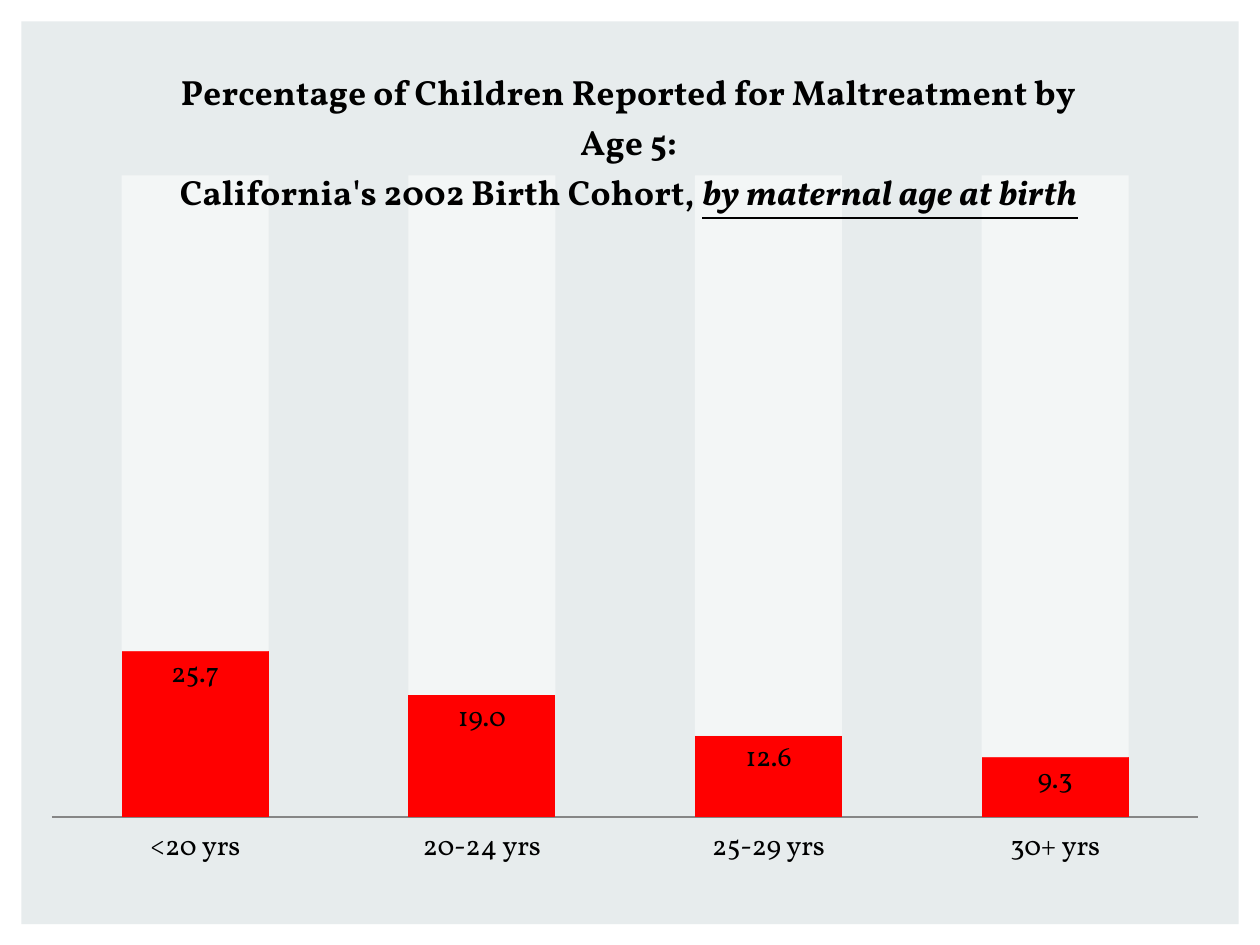
from lxml import etree
from pptx import Presentation
from pptx.chart.data import CategoryChartData
from pptx.dml.color import RGBColor
from pptx.enum.chart import XL_CHART_TYPE as ChartType
from pptx.enum.chart import XL_LABEL_POSITION as LabelPosition
from pptx.enum.chart import XL_TICK_LABEL_POSITION as TickLabels
from pptx.enum.chart import XL_TICK_MARK as TickMark
from pptx.enum.shapes import MSO_SHAPE as Shape
from pptx.enum.text import PP_ALIGN as Align
from pptx.oxml.ns import qn
from pptx.util import Cm, Pt

# Content
TITLE = [
    [("Percentage of Children Reported for Maltreatment by Age 5:", {})],
    [("California's 2002 Birth Cohort, ", {}),
     ("by maternal age at birth", {"italic": True, "underline": True})],
]
AGE_GROUPS = ["<20 yrs", "20-24 yrs", "25-29 yrs", "30+ yrs"]
SERIES = [
    {"name": "Series 1", "values": [25.7, 19.0, 12.6, 9.3], "color": "reported"},
    {"name": "Series 2", "values": [74, 81, 87, 91], "color": "rest", "opacity": 54},
]

# Style
FONT = "Vollkorn"
COLORS = {"panel": "E7ECED", "text": "000000", "axis": "868686",
          "reported": "FF0000", "rest": "FFFFFF"}
TITLE_PLACE = {"x": 0.12, "y": 0.03}
PLOT_PLACE = {"x": 0.016, "y": 0.157, "w": 0.96, "h": 0.739}


def color(name):
    return RGBColor.from_string(COLORS[name])


def format_font(font, **values):
    for key, value in {"name": FONT, **values}.items():
        setattr(font, key, value)
    font.color.rgb = color("text")


def place(parent, index, fractions, inner=False):
    """Give a chart part a fixed place, in fractions of the chart."""
    for old in parent.findall(qn("c:layout")):
        parent.remove(old)
    layout = etree.Element(qn("c:layout"))
    parent.insert(index, layout)
    manual = etree.SubElement(layout, qn("c:manualLayout"))
    settings = [("layoutTarget", "inner")] if inner else []
    settings += [(f"{key}Mode", "edge") for key in ("x", "y")]
    settings += fractions.items()
    for tag, value in settings:
        etree.SubElement(manual, qn(f"c:{tag}")).set("val", str(value))


presentation = Presentation()
presentation.slide_width, presentation.slide_height = Cm(25.4), Cm(19.05)
slide = presentation.slides.add_slide(presentation.slide_layouts[6])

# Background panel
panel = slide.shapes.add_shape(
    Shape.RECTANGLE, Cm(0.43), Cm(0.43), Cm(24.54), Cm(18.2))
panel.shadow.inherit = False
panel.fill.solid()
panel.fill.fore_color.rgb = color("panel")
panel.line.fill.background()

# Chart
data = CategoryChartData(number_format="0.0")
data.categories = AGE_GROUPS
for entry in SERIES:
    data.add_series(entry["name"], entry["values"])
chart = slide.shapes.add_chart(
    ChartType.COLUMN_STACKED_100, Cm(0.66), Cm(0.79), Cm(24.08), Cm(17.5), data).chart
chart.has_legend = False
format_font(chart.font, size=Pt(10))

# Chart title
chart.has_title = True
title_frame = chart.chart_title.text_frame
for number, runs in enumerate(TITLE):
    paragraph = title_frame.add_paragraph() if number else title_frame.paragraphs[0]
    paragraph.alignment = Align.CENTER
    for text, emphasis in runs:
        run = paragraph.add_run()
        run.text = text
        format_font(run.font, size=Pt(20), bold=True, **emphasis)
chart.chart_title.include_in_layout = True
title = chart.element.find(".//" + qn("c:title"))
place(title, 1, TITLE_PLACE)
place(chart.element.find(".//" + qn("c:plotArea")), 0, PLOT_PLACE, inner=True)

# Axes
axis_format = {"major_tick_mark": TickMark.NONE, "minor_tick_mark": TickMark.NONE,
               "has_major_gridlines": False}
for axis in (chart.category_axis, chart.value_axis):
    for key, value in axis_format.items():
        setattr(axis, key, value)
chart.value_axis.visible = False
age_axis = chart.category_axis
age_axis.tick_label_position = TickLabels.LOW
age_axis.format.line.color.rgb = color("axis")
format_font(age_axis.tick_labels.font, size=Pt(16), bold=False)

# Columns
plot = chart.plots[0]
plot.gap_width, plot.overlap, plot.vary_by_categories = 95, 100, False
for entry, series in zip(SERIES, plot.series):
    fill = series.format.fill
    fill.solid()
    fill.fore_color.rgb = color(entry["color"])
    if "opacity" in entry:
        tint = series.format.fill.fore_color
        solid = series._element.find(".//" + qn("a:srgbClr"))
        etree.SubElement(solid, qn("a:alpha")).set("val", str(entry["opacity"] * 1000))

# Value labels
labels = plot.series[0].data_labels
label_format = {"show_value": True, "position": LabelPosition.INSIDE_END,
                "number_format": "0.0", "number_format_is_linked": False}
for key, value in label_format.items():
    setattr(labels, key, value)
format_font(labels.font, size=Pt(16), bold=False)

presentation.save("out.pptx")
